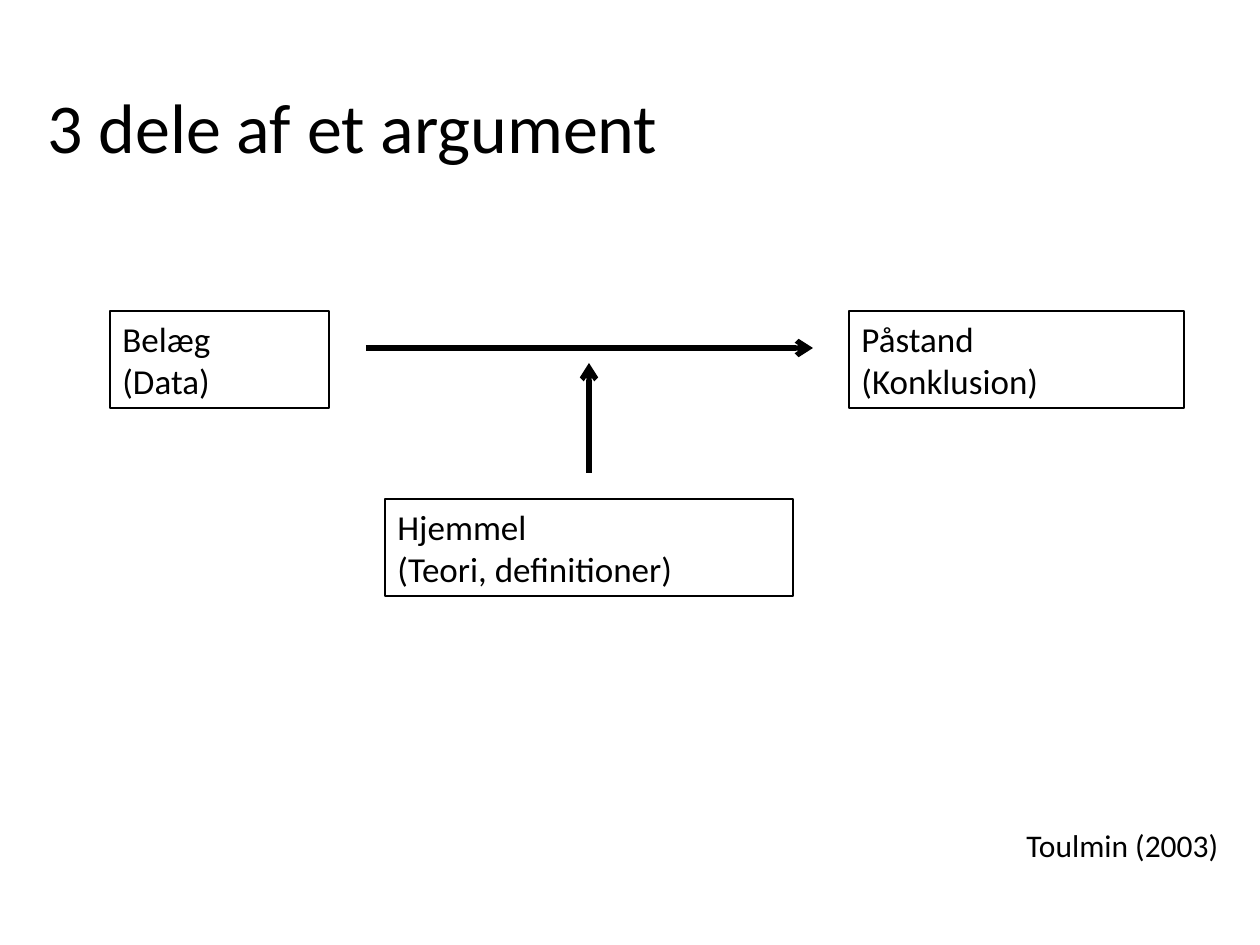
"""Build a slide on the three parts of an argument."""
from dataclasses import dataclass

from lxml.etree import SubElement
from pptx import Presentation
from pptx.dml.color import RGBColor
from pptx.enum.shapes import MSO_CONNECTOR, MSO_SHAPE
from pptx.enum.text import MSO_ANCHOR, PP_ALIGN
from pptx.oxml.ns import qn
from pptx.util import Emu, Pt


@dataclass
class Theme:
    font: str = "Calibri"
    ink: RGBColor = RGBColor(0, 0, 0)
    paper: RGBColor = RGBColor(255, 255, 255)
    title: int = 40
    label: int = 20
    source: int = 18
    edge: float = 0.75
    arrow: int = 3


theme = Theme()


def px(*sizes):
    return [Emu(round(size * 914400 / 126)) for size in sizes]


def write(shape, text, size, anchor=MSO_ANCHOR.TOP, wrap=True):
    frame = shape.text_frame
    frame.text = text
    frame.word_wrap = wrap
    frame.vertical_anchor = anchor
    for para in frame.paragraphs:
        para.alignment = PP_ALIGN.LEFT
        for run in para.runs:
            run.font.name = theme.font
            run.font.size = Pt(size)
            run.font.color.rgb = theme.ink


deck = Presentation()
deck.slide_width, deck.slide_height = px(1260, 945)
slide = deck.slides.add_slide(deck.slide_layouts[5])
slide.background.fill.solid()
slide.background.fill.fore_color.rgb = theme.paper

title = slide.shapes.title
title.left, title.top, title.width, title.height = px(35, 76, 1191, 100)
write(title, "3 dele af et argument", size=theme.title,
      anchor=MSO_ANCHOR.MIDDLE, wrap=False)

parts = [
    ("Belæg\n(Data)", 110, 311, 219),
    ("Påstand\n(Konklusion)", 849, 311, 335),
    ("Hjemmel\n(Teori, definitioner)", 385, 499, 408),
]
for text, left, top, width in parts:
    box = slide.shapes.add_shape(MSO_SHAPE.RECTANGLE, *px(left, top, width, 97))
    box.shadow.inherit = False
    box.fill.background()
    box.line.color.rgb = theme.ink
    box.line.width = Pt(theme.edge)
    write(box, text, size=theme.label)

for ends in [(366, 348, 813, 348), (589, 473, 589, 363)]:
    arrow = slide.shapes.add_connector(MSO_CONNECTOR.STRAIGHT, *px(*ends))
    arrow.line.color.rgb = theme.ink
    arrow.line.width = Pt(theme.arrow)
    SubElement(arrow.line._get_or_add_ln(), qn("a:tailEnd"), type="arrow")
    SubElement(arrow._element.spPr, qn("a:effectLst"))

source = slide.shapes.add_textbox(*px(1014, 820, 246, 50))
write(source, "Toulmin (2003)", size=theme.source)

deck.save("out.pptx")
